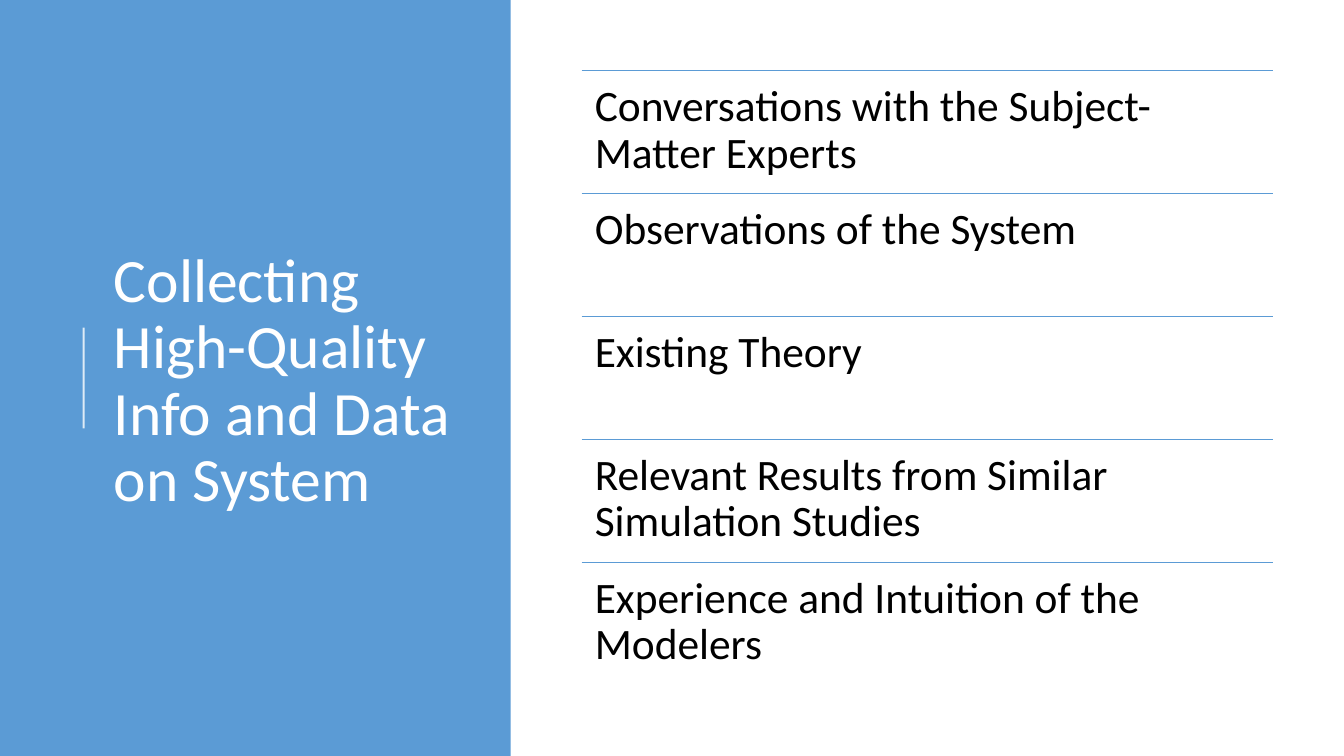
from lxml.etree import SubElement
from pptx import Presentation
from pptx.dml.color import RGBColor
from pptx.enum.shapes import MSO_CONNECTOR as Connector, MSO_SHAPE as Shape
from pptx.enum.text import MSO_ANCHOR as Anchor
from pptx.oxml.ns import qn
from pptx.util import Inches, Pt

WIDTH, HEIGHT = 13.33, 7.5
COLORS = {"panel": "5B9BD5", "rule": "5B9BD5", "title": "FFFFFF", "text": "000000"}
TITLE = "Collecting High-Quality Info and Data on System"
SOURCES = [
    "Conversations with the Subject-Matter Experts",
    "Observations of the System",
    "Existing Theory",
    "Relevant Results from Similar Simulation Studies",
    "Experience and Intuition of the Modelers",
]


def color(name):
    """Return the named colour."""
    return RGBColor.from_string(COLORS[name])


def add_line(slide, start, end, color_name, width, opacity=100):
    """Draw a straight line between two points given in inches."""
    line = slide.shapes.add_connector(
        Connector.STRAIGHT, *(Inches(value) for value in (*start, *end)))
    line.line.width = Pt(width)
    line.line.color.rgb = color(color_name)
    properties = line._element.spPr
    SubElement(properties, qn("a:effectLst"))
    if opacity < 100:
        fill = properties.find(".//" + qn("a:srgbClr"))
        SubElement(fill, qn("a:alpha")).set("val", str(opacity * 1000))


def add_text(slide, box, text, size, color_name, anchor, insets):
    """Place one wrapped paragraph in a box given in inches."""
    frame = slide.shapes.add_textbox(*(Inches(value) for value in box)).text_frame
    horizontal, vertical = (Inches(value) for value in insets)
    layout = {"word_wrap": True, "vertical_anchor": anchor,
              "margin_left": horizontal, "margin_right": horizontal,
              "margin_top": vertical, "margin_bottom": vertical}
    for name, value in layout.items():
        setattr(frame, name, value)
    paragraph = frame.paragraphs[0]
    paragraph.line_spacing = 0.9
    run = paragraph.add_run()
    run.text = text
    for name, value in {"name": "Calibri", "size": Pt(size)}.items():
        setattr(run.font, name, value)
    run.font.color.rgb = color(color_name)


def add_title_panel(slide, box):
    """Fill the panel and set the title beside its accent line."""
    left, top, width, height = box
    panel = slide.shapes.add_shape(
        Shape.RECTANGLE, *(Inches(value) for value in box))
    panel.shadow.inherit = False
    panel.fill.solid()
    panel.fill.fore_color.rgb = color("panel")
    panel.line.fill.background()
    accent, middle = left + 0.83, top + height / 2
    add_line(slide, (accent, middle - 0.5), (accent, middle + 0.5), "title", 1.5, 80)
    title_box = (accent + 0.2, top + 0.78, width - 1.38, height - 1.48)
    add_text(slide, title_box, TITLE, 44, "title", Anchor.MIDDLE, (0.1, 0.05))


def add_source_list(slide, box):
    """Stack the sources in equal rows, each under a rule."""
    left, top, width, height = box
    row_height = height / len(SOURCES)
    for index, source in enumerate(SOURCES):
        row_top = top + index * row_height
        add_line(slide, (left, row_top), (left + width, row_top), "rule", 1)
        add_text(slide, (left, row_top, width, row_height), source, 31,
                 "text", Anchor.TOP, (0.13, 0.13))


def main():
    """Build and save the slide."""
    presentation = Presentation()
    presentation.slide_width, presentation.slide_height = Inches(WIDTH), Inches(HEIGHT)
    slide = presentation.slides.add_slide(presentation.slide_layouts[6])
    add_title_panel(slide, (0, 0, WIDTH * 0.38, HEIGHT))
    add_source_list(slide, (5.77, 0.7, 6.86, 6.1))
    presentation.save("out.pptx")


if __name__ == "__main__":
    main()
